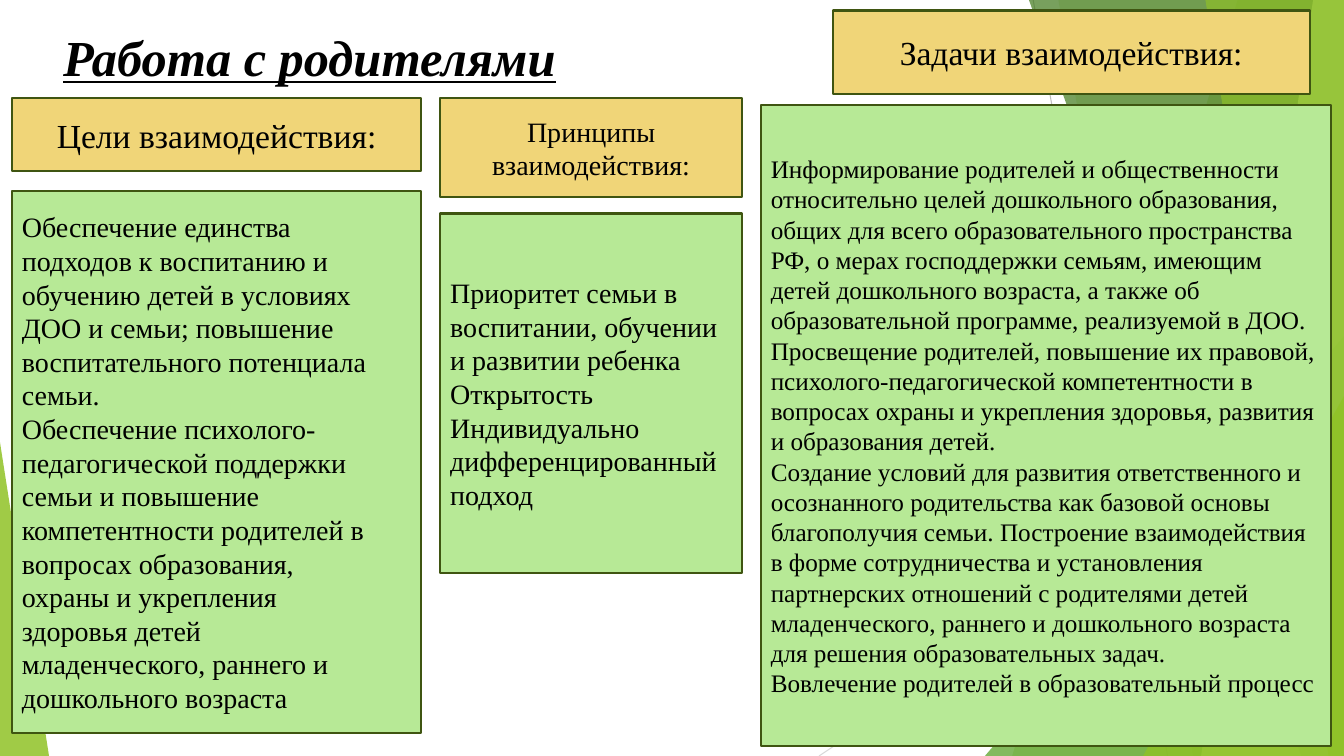
from dataclasses import dataclass

from lxml.etree import SubElement
from pptx import Presentation
from pptx.dml.color import RGBColor
from pptx.enum.shapes import MSO_CONNECTOR, MSO_SHAPE
from pptx.enum.text import MSO_ANCHOR, PP_ALIGN
from pptx.oxml.ns import qn
from pptx.util import Pt


@dataclass(frozen=True)
class Theme:
    font: str = "Times New Roman"
    text: str = "000000"
    heading_fill: str = "F0D578"
    body_fill: str = "B7E996"
    border: str = "3F5511"
    leaf: str = "90C226"
    grass: str = "54A021"
    forest: str = "3F7819"
    lime: str = "C0E474"
    dark_ray: str = "BFBFBF"
    light_ray: str = "D9D9D9"
    title_size: int = 36
    large: int = 24
    medium: int = 20
    small: int = 18


THEME = Theme()
WIDTH, HEIGHT = 960, 540

GOALS = [
    "Обеспечение единства",
    "подходов к воспитанию и",
    "обучению детей в условиях",
    "ДОО и семьи; повышение",
    "воспитательного потенциала семьи.",
    "Обеспечение психолого-педагогической поддержки",
    "семьи и повышение",
    "компетентности родителей в",
    "вопросах образования,",
    "охраны и укрепления",
    "здоровья детей",
    "младенческого, раннего и",
    "дошкольного возраста",
]
PRINCIPLES = [
    "Приоритет семьи в",
    "воспитании, обучении",
    "и развитии ребенка",
    "Открытость",
    "Индивидуально дифференцированный",
    "подход",
]
TASKS = [
    "Информирование родителей и общественности",
    "относительно целей дошкольного образования, общих для всего "
    "образовательного пространства РФ, о мерах господдержки семьям, имеющим "
    "детей дошкольного возраста, а также об образовательной программе, "
    "реализуемой в ДОО.",
    "Просвещение родителей, повышение их правовой,",
    "психолого-педагогической компетентности в вопросах охраны и укрепления "
    "здоровья, развития и образования детей.",
    "Создание условий для развития ответственного и осознанного родительства "
    "как базовой основы благополучия семьи. Построение взаимодействия в форме "
    "сотрудничества и установления партнерских отношений с родителями детей "
    "младенческого, раннего и дошкольного возраста для решения "
    "образовательных задач.",
    "Вовлечение родителей в образовательный процесс",
]


def write_text(shape, lines, size, align=PP_ALIGN.LEFT, anchor=MSO_ANCHOR.MIDDLE,
               bold=False, italic=False, underline=False):
    frame = shape.text_frame
    frame.word_wrap = True
    frame.vertical_anchor = anchor
    for index, line in enumerate(lines):
        paragraph = frame.add_paragraph() if index else frame.paragraphs[0]
        paragraph.alignment = align
        run = paragraph.add_run()
        run.text = line
        font = run.font
        font.name, font.size = THEME.font, Pt(size)
        font.bold, font.italic, font.underline = bold, italic, underline
        font.color.rgb = RGBColor.from_string(THEME.text)


def paint(shape, color, opacity=100):
    shape.shadow.inherit = False
    shape.fill.solid()
    shape.fill.fore_color.rgb = RGBColor.from_string(color)
    shape.line.fill.background()
    if opacity < 100:
        color_element = shape.fill._xPr.find(qn("a:solidFill"))[0]
        SubElement(color_element, qn("a:alpha")).set("val", str(opacity * 1000))


def add_ray(slide, start, end, color):
    ray = slide.shapes.add_connector(MSO_CONNECTOR.STRAIGHT, *map(Pt, start + end))
    ray.line.color.rgb = RGBColor.from_string(color)
    ray.line.width = Pt(0.75)
    SubElement(ray._element.spPr, qn("a:effectLst"))


def add_band(slide, top_x, bottom_x, color, opacity):
    builder = slide.shapes.build_freeform(Pt(top_x), 0)
    corners = [(WIDTH, 0), (WIDTH, HEIGHT), (bottom_x, HEIGHT)]
    builder.add_line_segments([(Pt(x), Pt(y)) for x, y in corners], close=True)
    paint(builder.convert_to_shape(), color, opacity)


def add_corner(slide, left, top, right, apex, color, opacity):
    corner = slide.shapes.add_shape(
        MSO_SHAPE.ISOSCELES_TRIANGLE, Pt(left), Pt(top), Pt(right - left), Pt(HEIGHT - top))
    corner.adjustments[0] = apex
    paint(corner, color, opacity)


def add_box(slide, bounds, fill, lines, size, align=PP_ALIGN.LEFT):
    box = slide.shapes.add_shape(MSO_SHAPE.RECTANGLE, *map(Pt, bounds))
    paint(box, fill)
    box.line.color.rgb = RGBColor.from_string(THEME.border)
    box.line.width = Pt(1.5)
    write_text(box, lines, size, align)


def add_backdrop(slide):
    add_ray(slide, (738, 0), (834, HEIGHT), THEME.dark_ray)
    add_ray(slide, (WIDTH, 290), (585, HEIGHT), THEME.light_ray)
    add_band(slide, 884, 723, THEME.leaf, 30)
    add_band(slide, 756, 852, THEME.leaf, 20)
    add_corner(slide, 703.5, 240, WIDTH, 1, THEME.grass, 72)
    add_band(slide, 735, 929.5, THEME.forest, 70)
    add_band(slide, 938, 858, THEME.lime, 70)
    add_band(slide, 861, 949, THEME.leaf, 65)
    add_corner(slide, 816.5, 283, WIDTH, 1, THEME.leaf, 80)
    add_corner(slide, 0, 316, 35, 0, THEME.leaf, 85)


def add_title(slide, text):
    title = slide.shapes.add_textbox(Pt(38), Pt(15), Pt(677), Pt(104))
    write_text(title, [text], THEME.title_size, anchor=MSO_ANCHOR.TOP,
               bold=True, italic=True, underline=True)


def main():
    presentation = Presentation()
    presentation.slide_width, presentation.slide_height = Pt(WIDTH), Pt(HEIGHT)
    slide = presentation.slides.add_slide(presentation.slide_layouts[6])
    add_backdrop(slide)
    add_title(slide, "Работа с родителями")

    headings = [
        ((8.5, 70, 292.5, 52.5), ["Цели взаимодействия:"], THEME.large),
        ((314.5, 70, 215.5, 71), ["Принципы", "взаимодействия:"], THEME.medium),
        ((595, 7.5, 340.5, 59.5), ["Задачи взаимодействия:"], THEME.large),
    ]
    bodies = [
        ((8.5, 136.5, 292.5, 387), GOALS, THEME.medium),
        ((314.5, 152.5, 215.5, 257), PRINCIPLES, THEME.medium),
        ((543.5, 75, 407.5, 458), TASKS, THEME.small),
    ]
    for bounds, lines, size in headings:
        add_box(slide, bounds, THEME.heading_fill, lines, size, PP_ALIGN.CENTER)
    for bounds, lines, size in bodies:
        add_box(slide, bounds, THEME.body_fill, lines, size)
    presentation.save("out.pptx")


if __name__ == "__main__":
    main()
